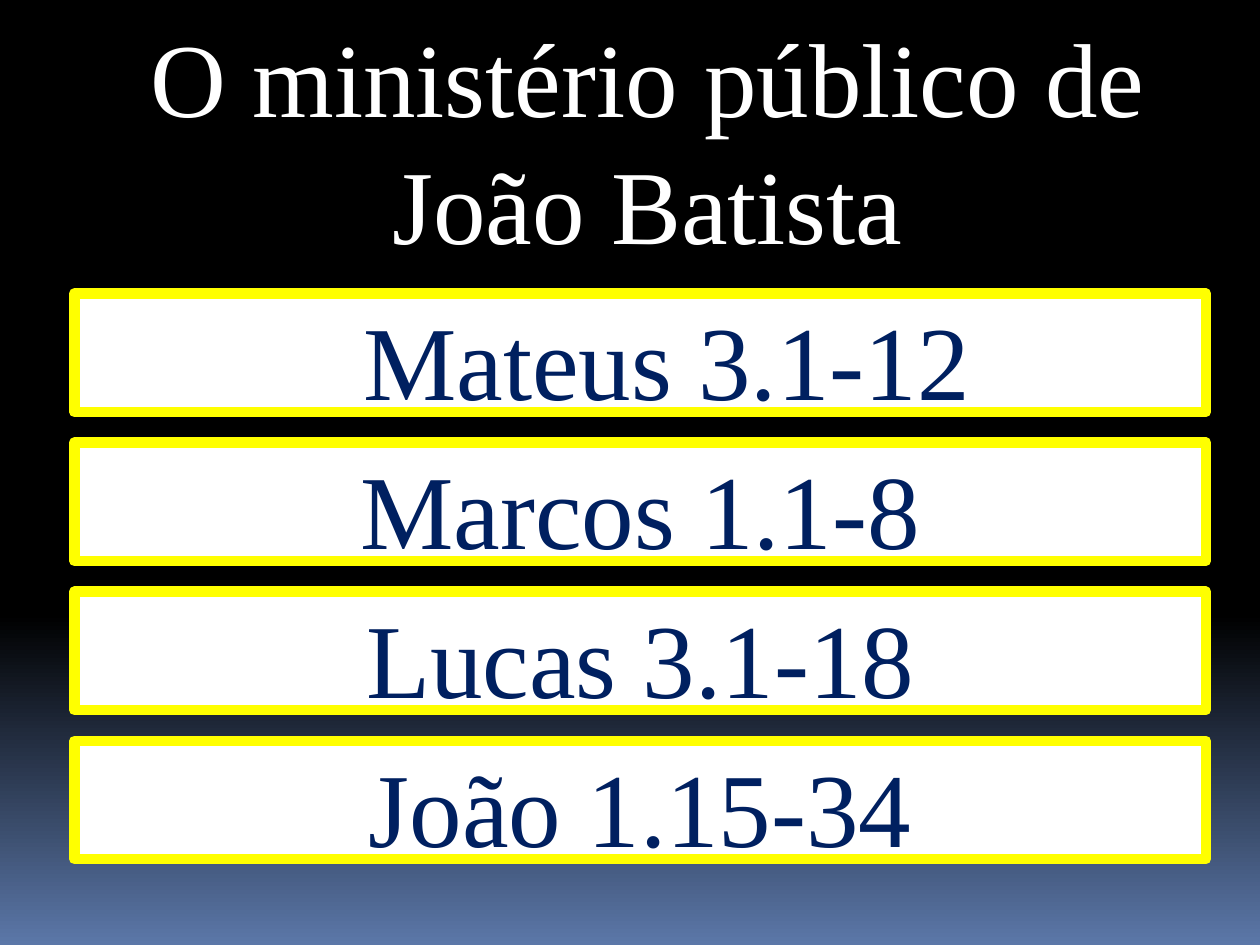
from pptx import Presentation
from pptx.dml.color import RGBColor
from pptx.enum.shapes import MSO_SHAPE as Shape
from pptx.enum.text import MSO_ANCHOR as Anchor, PP_ALIGN as Align
from pptx.util import Inches, Pt


def rgb(code):
    """Turn a hex string into a colour."""
    return RGBColor.from_string(code)


def paint(slide):
    """Fill the background with a vertical fade from black to blue."""
    fill = slide.background.fill
    fill.gradient()
    fill.gradient_angle = 270
    for stop, (pos, code) in zip(fill.gradient_stops, [(0.65, "000000"), (1, "5B77A8")]):
        stop.position = pos
        stop.color.rgb = rgb(code)


def write(frame, text, code):
    """Write one centred line of large text."""
    frame.word_wrap = True
    para = frame.paragraphs[0]
    para.alignment = Align.CENTER
    para.line_spacing = Pt(72.6)
    run = para.add_run()
    run.text = text
    font = run.font
    font.name, font.size = "Times New Roman", Pt(60)
    font.color.rgb = rgb(code)


def title(slide, left, top, width, height):
    """Place the heading in its box."""
    box = slide.shapes.add_textbox(Inches(left), Inches(top), Inches(width), Inches(height))
    box.text_frame.margin_top = Inches(0.09)
    write(box.text_frame, "O ministério público de João Batista", "FFFFFF")


def verses(slide, left, top, width, height):
    """Stack the framed Bible references in equal rows."""
    rows = [("Mateus 3.1-12", 0.42), ("Marcos 1.1-8", 0), ("Lucas 3.1-18", 0), ("João 1.15-34", 0)]
    tall = 0.94
    step = (height - tall) / (len(rows) - 1)
    for i, (text, indent) in enumerate(rows):
        bar = slide.shapes.add_shape(
            Shape.RECTANGLE, Inches(left), Inches(top + i * step), Inches(width), Inches(tall))
        bar.shadow.inherit = False
        bar.fill.solid()
        bar.fill.fore_color.rgb = rgb("FFFFFF")
        bar.line.color.rgb = rgb("FFFF00")
        bar.line.width = Pt(6)
        frame = bar.text_frame
        frame.vertical_anchor = Anchor.MIDDLE
        frame.margin_left = Inches(0.1 + indent)
        frame.margin_top, frame.margin_bottom = Inches(0.08), 0
        write(frame, text, "002060")


def main():
    """Build and save the slide."""
    deck = Presentation()
    deck.slide_width, deck.slide_height = Inches(10), Inches(7.5)
    slide = deck.slides.add_slide(deck.slide_layouts[6])
    paint(slide)
    title(slide, 0.28, 0, 9.72, 2.12)
    verses(slide, 0.59, 2.33, 8.98, 4.49)
    deck.save("out.pptx")


if __name__ == "__main__":
    main()
